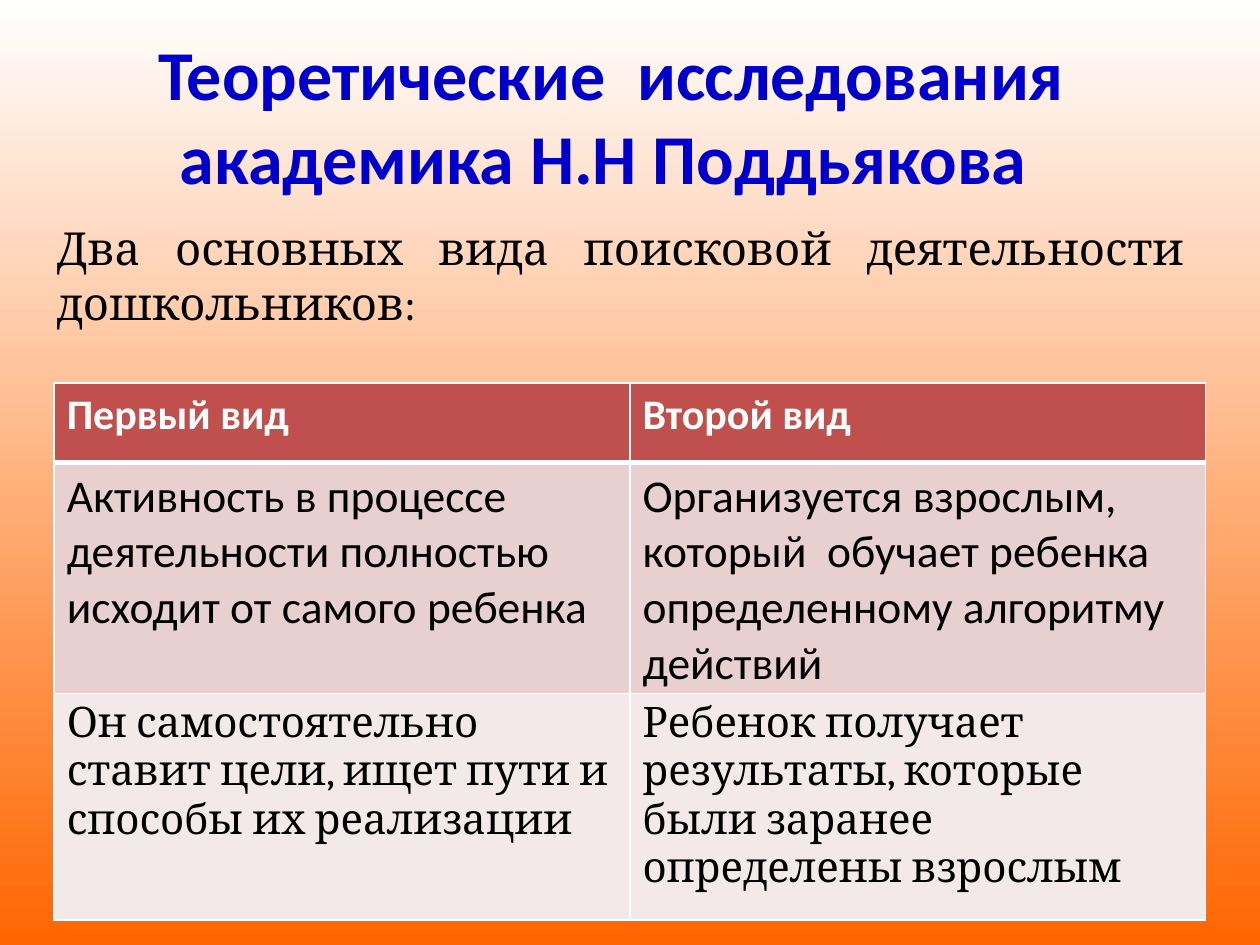
from pptx import Presentation
from pptx.dml.color import RGBColor as RGB
from pptx.enum.text import MSO_ANCHOR as Anchor, PP_ALIGN as Align
from pptx.oxml.ns import qn
from pptx.util import Inches, Pt
from lxml.etree import SubElement as Sub

ORANGE = RGB(0xFF, 0x66, 0x00)
WHITE = RGB(0xFF, 0xFF, 0xFF)
BLACK = RGB(0, 0, 0)
BLUE = RGB(0, 0, 0xCC)
RED = RGB(0xC0, 0x50, 0x4D)
ROSE = RGB(0xE8, 0xD0, 0xD0)
PALE = RGB(0xF4, 0xE9, 0xE9)

# Row: height, fill, font, size, colour, bold, texts
ROWS = [
    (0.63, RED, "Calibri", 24, WHITE, True, ("Первый вид", "Второй вид")),
    (1.8, ROSE, "Calibri", 26, BLACK, False, (
        "Активность в процессе деятельности полностью исходит от самого ребенка",
        "Организуется взрослым, который  обучает ребенка определенному "
        "алгоритму действий")),
    (1.8, PALE, "Cambria", 24, BLACK, False, (
        "Он самостоятельно ставит цели, ищет пути и способы их реализации",
        "Ребенок получает результаты, которые были заранее определены "
        "взрослым")),
]


def set_text(frame, text, face, size, color, bold=False, align=Align.LEFT):
    frame.text = text
    para = frame.paragraphs[0]
    para.alignment = align
    font = para.runs[0].font
    font.name, font.size, font.bold = face, Pt(size), bold
    font.color.rgb = color


def add_text(slide, box, anchor, *style):
    frame = slide.shapes.add_textbox(*map(Inches, box)).text_frame
    frame.word_wrap = True
    frame.vertical_anchor = anchor
    set_text(frame, *style)


def set_edges(cell, top, bottom):
    props = cell._tc.get_or_add_tcPr()
    edges = (("a:lnL", 1), ("a:lnR", 1), ("a:lnT", top), ("a:lnB", bottom))
    for spot, (tag, width) in enumerate(edges):
        line = Sub(props, qn(tag), w=str(Pt(width)))
        fill = Sub(line, qn("a:solidFill"))
        Sub(fill, qn("a:srgbClr"), val=str(WHITE))
        props.insert(spot, line)  # borders come before the fill


def add_grid(slide):
    box = map(Inches, (0.43, 3.04, 9.14, 4.23))
    table = slide.shapes.add_table(len(ROWS), 2, *box).table
    for col in table.columns:
        col.width = Inches(4.57)
    for r, (height, fill, face, size, color, bold, texts) in enumerate(ROWS):
        table.rows[r].height = Inches(height)
        for c, text in enumerate(texts):
            cell = table.cell(r, c)
            cell.fill.solid()
            cell.fill.fore_color.rgb = fill
            set_text(cell.text_frame, text, face, size, color, bold)
            # Thick rule under the header row
            set_edges(cell, 3 if r == 1 else 1, 3 if r == 0 else 1)


def set_back(slide):
    fill = slide.background.fill
    fill.gradient()
    fill.gradient_angle = 90
    for stop, place, color in zip(fill.gradient_stops, (0, 1), (ORANGE, WHITE)):
        stop.position = place
        stop.color.rgb = color


def main():
    deck = Presentation()
    deck.slide_width, deck.slide_height = Inches(10), Inches(7.5)
    slide = deck.slides.add_slide(deck.slide_layouts[6])
    set_back(slide)
    # Title and lead sentence
    add_text(slide, (0.35, 0.28, 9, 1.25), Anchor.MIDDLE,
             "Теоретические  исследования академика Н.Н Поддьякова ",
             "Calibri", 40, BLUE, True, Align.CENTER)
    add_text(slide, (0.35, 1.7, 9.15, 1.18), Anchor.TOP,
             "Два основных вида поисковой деятельности дошкольников:",
             "Cambria", 26, BLACK, False, Align.JUSTIFY)
    # Comparison of the two kinds
    add_grid(slide)
    deck.save("out.pptx")


if __name__ == "__main__":
    main()
